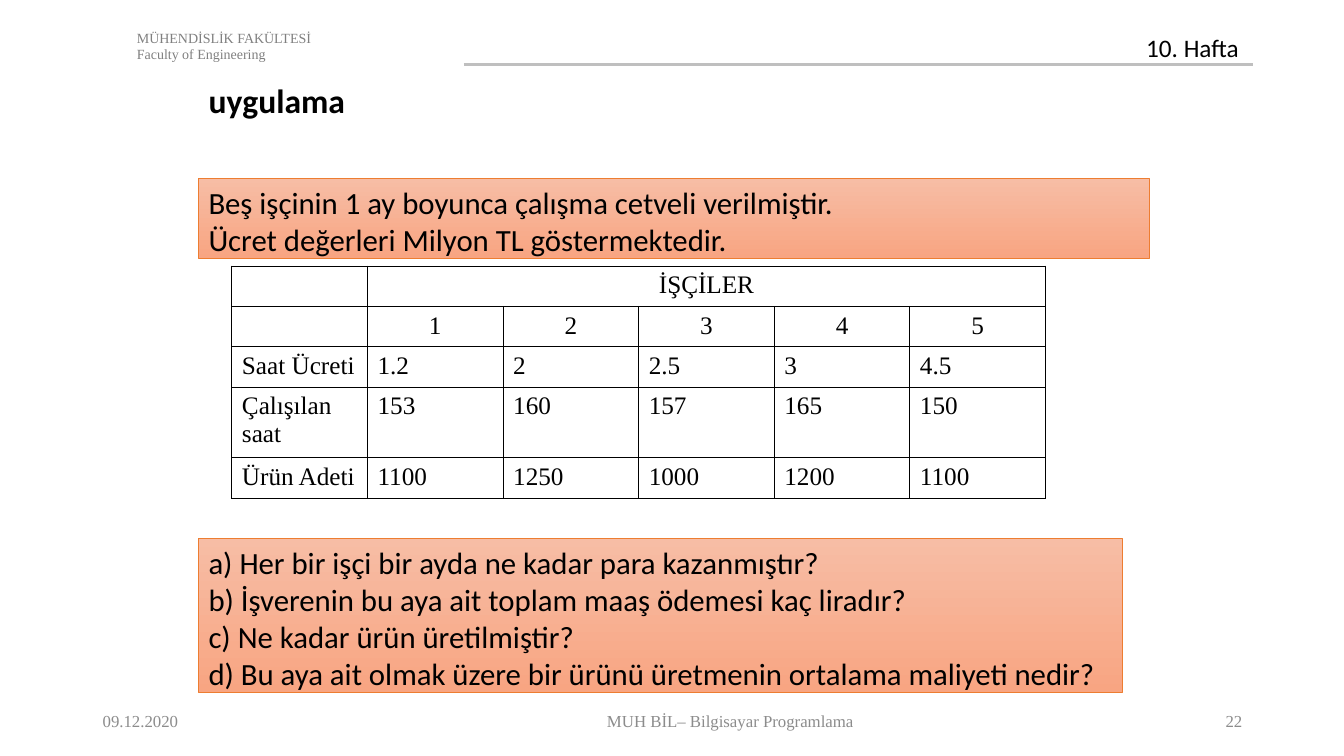
from lxml.etree import SubElement
from pptx import Presentation
from pptx.dml.color import RGBColor
from pptx.enum.shapes import MSO_CONNECTOR, MSO_SHAPE
from pptx.enum.text import MSO_ANCHOR, MSO_AUTO_SIZE, PP_ALIGN
from pptx.oxml.ns import qn
from pptx.util import Inches, Pt


def color(value):
    return RGBColor.from_string(value)


class WorksheetSlide:
    sans = "Calibri"
    serif = "Times New Roman"
    black = "000000"
    footer_gray = "8C8C8C"
    header_gray = "808080"
    rule_gray = "BFBFBF"
    panel_top = "F7BDA5"
    panel_bottom = "F8A582"
    panel_border = "ED7D31"

    def __init__(self, presentation):
        self.slide = presentation.slides.add_slide(presentation.slide_layouts[5])

    def add_lines(self, frame, lines, size, font, ink=black, align=PP_ALIGN.LEFT, bold=False):
        for index, line in enumerate(lines):
            paragraph = frame.paragraphs[0] if index == 0 else frame.add_paragraph()
            paragraph.alignment = align
            run = paragraph.add_run()
            run.text = line
            run.font.size = Pt(size)
            run.font.name = font
            run.font.bold = bold
            run.font.color.rgb = color(ink)

    def title(self, text, left, top, width, height):
        shape = self.slide.shapes.title
        shape.left, shape.top = Inches(left), Inches(top)
        shape.width, shape.height = Inches(width), Inches(height)
        frame = shape.text_frame
        frame.auto_size = MSO_AUTO_SIZE.NONE
        frame.vertical_anchor = MSO_ANCHOR.TOP
        self.add_lines(frame, [text], 24, self.sans, bold=True)

    def text(self, lines, left, top, width, height, size, font, ink,
             align=PP_ALIGN.LEFT, anchor=MSO_ANCHOR.TOP):
        shape = self.slide.shapes.add_textbox(
            Inches(left), Inches(top), Inches(width), Inches(height))
        frame = shape.text_frame
        frame.word_wrap = True
        frame.vertical_anchor = anchor
        self.add_lines(frame, lines, size, font, ink, align)

    def rule(self, left, right, top):
        line = self.slide.shapes.add_connector(
            MSO_CONNECTOR.STRAIGHT, Inches(left), Inches(top), Inches(right), Inches(top))
        line.line.color.rgb = color(self.rule_gray)
        line.line.width = Pt(1.5)
        SubElement(line._element.spPr, qn("a:effectLst"))

    def panel(self, lines, left, top, width, height, wrap=True):
        shape = self.slide.shapes.add_shape(
            MSO_SHAPE.RECTANGLE, Inches(left), Inches(top), Inches(width), Inches(height))
        shape.shadow.inherit = False
        shape.fill.gradient()
        shape.fill.gradient_angle = 270
        for stop, shade in zip(shape.fill.gradient_stops, (self.panel_top, self.panel_bottom)):
            stop.color.rgb = color(shade)
        shape.line.color.rgb = color(self.panel_border)
        shape.line.width = Pt(0.5)
        frame = shape.text_frame
        frame.word_wrap = wrap
        frame.vertical_anchor = MSO_ANCHOR.MIDDLE
        frame.margin_bottom = 0
        self.add_lines(frame, lines, 22, self.sans)

    def border(self, cell):
        properties = cell._tc.get_or_add_tcPr()
        for side in ("a:lnL", "a:lnR", "a:lnT", "a:lnB"):
            line = SubElement(properties, qn(side), w=str(Pt(1)))
            fill = SubElement(line, qn("a:solidFill"))
            SubElement(fill, qn("a:srgbClr"), val=self.black)

    def table(self, rows, heights, left, top, width, header_rows):
        columns = len(rows[0])
        table = self.slide.shapes.add_table(
            len(rows), columns, Inches(left), Inches(top),
            Inches(width), Inches(sum(heights))).table
        table.first_row = False
        table.horz_banding = False
        for column in table.columns:
            column.width = Inches(width / columns)
        for row_index, (values, height) in enumerate(zip(rows, heights)):
            table.rows[row_index].height = Inches(height)
            align = PP_ALIGN.CENTER if row_index < header_rows else PP_ALIGN.LEFT
            for column_index, value in enumerate(values):
                cell = table.cell(row_index, column_index)
                self.border(cell)
                cell.fill.background()
                if value:
                    self.add_lines(cell.text_frame, [value], 18, self.serif, align=align)
        table.cell(0, 1).merge(table.cell(0, columns - 1))

    def footer(self, text, left, width, align):
        self.text([text], left, 6.95, width, 0.4, 12, self.serif, self.footer_gray,
                  align, MSO_ANCHOR.MIDDLE)


def main():
    presentation = Presentation()
    presentation.slide_width = Inches(13.33)
    presentation.slide_height = Inches(7.5)
    page = WorksheetSlide(presentation)

    page.rule(4.6, 12.43, 0.64)
    page.text(["MÜHENDİSLİK FAKÜLTESİ", "Faculty of Engineering"],
              1.26, 0.24, 6.67, 0.44, 10, page.serif, page.header_gray)
    page.text(["10. Hafta"], 11.27, 0.27, 1.15, 0.4, 18, page.sans, page.black)
    page.title("uygulama", 1.97, 0.74, 4.71, 0.5)

    page.panel(["Beş işçinin 1 ay boyunca çalışma cetveli verilmiştir.",
                "Ücret değerleri Milyon TL göstermektedir."],
               1.97, 1.77, 9.43, 0.79)
    page.table([
        ["", "İŞÇİLER", "", "", "", ""],
        ["", "1", "2", "3", "4", "5"],
        ["Saat Ücreti", "1.2", "2", "2.5", "3", "4.5"],
        ["Çalışılan saat", "153", "160", "157", "165", "150"],
        ["Ürün Adeti", "1100", "1250", "1000", "1200", "1100"],
    ], [0.4, 0.4, 0.4, 0.7, 0.4], 2.3, 2.64, 8.07, header_rows=2)
    page.panel(["a) Her bir işçi bir ayda ne kadar para kazanmıştır?",
                "b) İşverenin bu aya ait toplam maaş ödemesi kaç liradır?",
                "c) Ne kadar ürün üretilmiştir?",
                "d) Bu aya ait olmak üzere bir ürünü üretmenin ortalama maliyeti nedir?"],
               1.97, 5.34, 9.16, 1.53, wrap=False)

    page.footer("09.12.2020", 0.92, 1.57, PP_ALIGN.LEFT)
    page.footer("MUH BİL– Bilgisayar Programlama", 2.73, 9.03, PP_ALIGN.CENTER)
    page.footer("22", 11.97, 0.45, PP_ALIGN.RIGHT)
    presentation.save("out.pptx")


if __name__ == "__main__":
    main()
